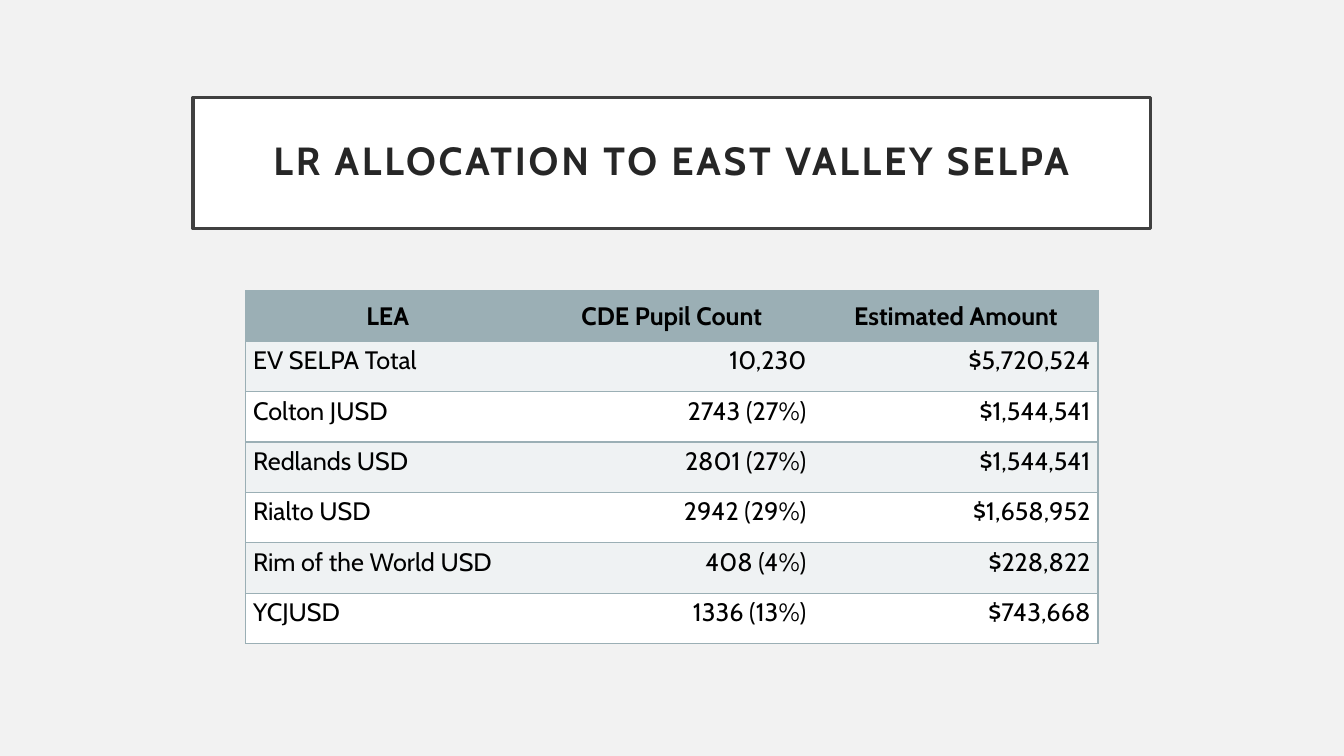
import pptx
import pptx.dml.color
import pptx.enum.shapes
import pptx.enum.text
import pptx.oxml
import pptx.oxml.ns
import pptx.util

Cm = pptx.util.Cm
Pt = pptx.util.Pt
ALIGN = pptx.enum.text.PP_ALIGN
ANCHOR = pptx.enum.text.MSO_ANCHOR

ACCENT = "9BAFB5"
BAND_FILLS = ["FFFFFF", "EFF2F3"]
ROWS = [
    ("LEA", "CDE Pupil Count", "Estimated Amount"),
    ("EV SELPA Total", "10,230", "$5,720,524"),
    ("Colton JUSD", "2743 (27%)", "$1,544,541"),
    ("Redlands USD", "2801 (27%)", "$1,544,541"),
    ("Rialto USD", "2942 (29%)", "$1,658,952"),
    ("Rim of the World USD", "408 (4%)", "$228,822"),
    ("YCJUSD", "1336 (13%)", "$743,668"),
]


def set_color(color_format, hex_string):
    color_format.rgb = pptx.dml.color.RGBColor.from_string(hex_string)


def write_text(paragraph, text, alignment, size, bold, color):
    paragraph.alignment = alignment
    run = paragraph.add_run()
    run.text = text
    font_values = {"name": "Cabin", "size": Pt(size), "bold": bold}
    for name, value in font_values.items():
        setattr(run.font, name, value)
    set_color(run.font.color, color)
    return run


presentation = pptx.Presentation()
presentation.slide_width = Cm(33.87)
presentation.slide_height = Cm(19.05)
slide = presentation.slides.add_slide(presentation.slide_layouts[6])
slide.background.fill.solid()
set_color(slide.background.fill.fore_color, "F2F2F2")

# Framed title
title = slide.shapes.add_shape(
    pptx.enum.shapes.MSO_SHAPE.RECTANGLE, Cm(4.86), Cm(2.46), Cm(24.13), Cm(3.3))
title.shadow.inherit = False
title.fill.solid()
set_color(title.fill.fore_color, "FFFFFF")
set_color(title.line.color, "404040")
title.line.width = Pt(2.5)
frame_values = {"word_wrap": True, "vertical_anchor": ANCHOR.MIDDLE}
for side in ("left", "right", "top", "bottom"):
    frame_values["margin_" + side] = Cm(0.5)
for name, value in frame_values.items():
    setattr(title.text_frame, name, value)
title_paragraph = title.text_frame.paragraphs[0]
title_paragraph.line_spacing = 0.9
title_run = write_text(title_paragraph, "LR ALLOCATION TO EAST VALLEY SELPA",
                       ALIGN.CENTER, 28, True, "262626")
title_run.font._element.set("spc", "200")

# Allocation table
column_count = len(ROWS[0])
column_width, row_height = Cm(7.16), Cm(1.27)
table = slide.shapes.add_table(
    len(ROWS), column_count, Cm(6.19), Cm(7.33),
    column_width * column_count, row_height * len(ROWS)).table
table.horz_banding = False
for column in table.columns:
    column.width = column_width
for row in table.rows:
    row.height = row_height

for row_index, row_texts in enumerate(ROWS):
    is_header = row_index == 0
    for column_index, text in enumerate(row_texts):
        cell = table.cell(row_index, column_index)
        cell_values = {
            "margin_left": Cm(0.19), "margin_right": Cm(0.19),
            "margin_top": Cm(0.1), "margin_bottom": Cm(0.1),
            "vertical_anchor": ANCHOR.MIDDLE if is_header else ANCHOR.TOP,
        }
        for name, value in cell_values.items():
            setattr(cell, name, value)
        cell.fill.solid()
        set_color(cell.fill.fore_color,
                  ACCENT if is_header else BAND_FILLS[row_index % 2])

        if is_header:
            alignment = ALIGN.CENTER
        else:
            alignment = ALIGN.LEFT if column_index == 0 else ALIGN.RIGHT
        write_text(cell.text_frame.paragraphs[0], text, alignment, 18, is_header, "000000")

        # Rules between rows and around the table, none between columns
        visible_edges = {"L": column_index == 0, "R": column_index == column_count - 1,
                         "T": True, "B": True}
        for position, (edge, visible) in enumerate(visible_edges.items()):
            paint = (f'<a:solidFill><a:srgbClr val="{ACCENT}"/></a:solidFill>'
                     if visible else "<a:noFill/>")
            border = pptx.oxml.parse_xml(
                f'<a:ln{edge} {pptx.oxml.ns.nsdecls("a")} w="12700">{paint}</a:ln{edge}>')
            cell._tc.get_or_add_tcPr().insert(position, border)

presentation.save("out.pptx")
